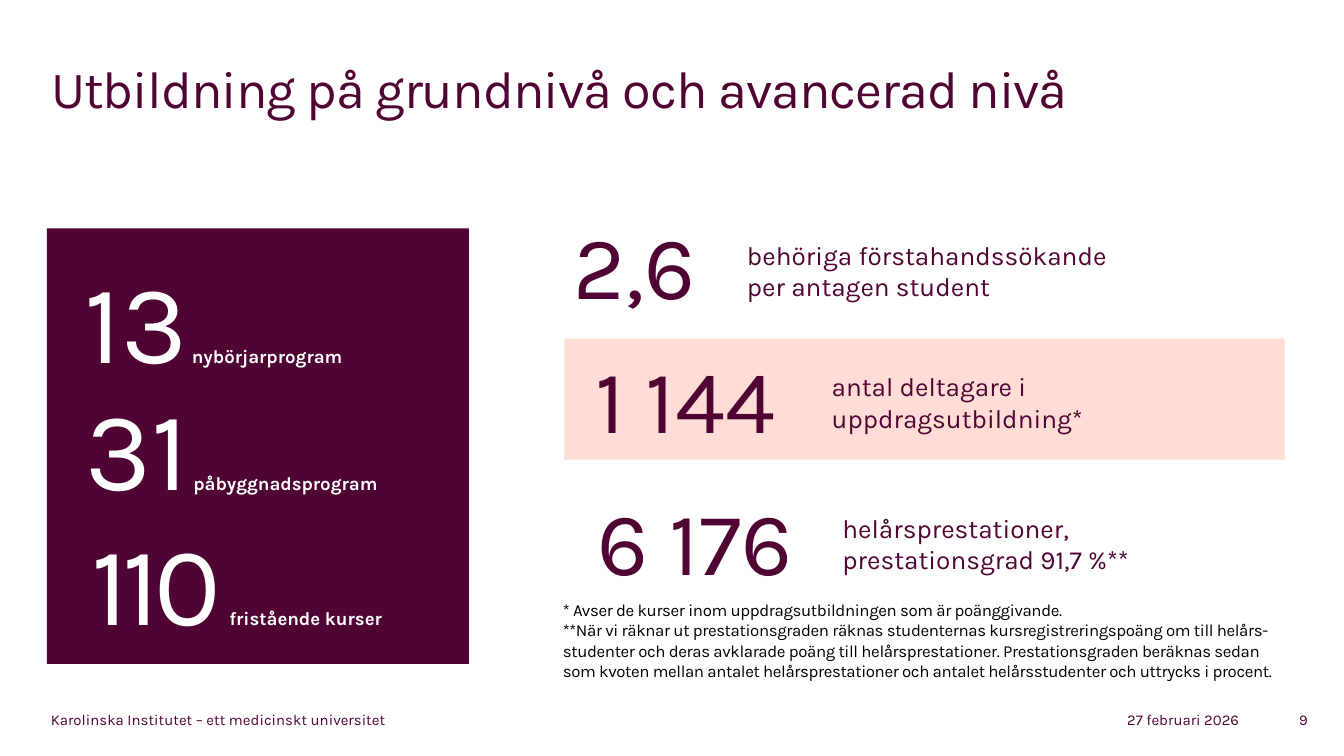
from dataclasses import dataclass

from pptx import Presentation
from pptx.dml.color import RGBColor
from pptx.enum.shapes import MSO_SHAPE
from pptx.enum.text import MSO_ANCHOR, MSO_AUTO_SIZE, PP_ALIGN
from pptx.util import Inches, Pt

RECT = MSO_SHAPE.RECTANGLE
TOP = MSO_ANCHOR.TOP
FIXED = MSO_AUTO_SIZE.NONE
LEFT, MID, RIGHT = PP_ALIGN.LEFT, PP_ALIGN.CENTER, PP_ALIGN.RIGHT
WIDTH = 10
HEIGHT = WIDTH * 9 / 16


@dataclass(frozen=True)
class Theme:
    font: str = "Karla"
    plum: RGBColor = RGBColor(0x4F, 0x04, 0x33)
    pink: RGBColor = RGBColor(0xFF, 0xDD, 0xD6)
    white: RGBColor = RGBColor(0xFF, 0xFF, 0xFF)
    black: RGBColor = RGBColor(0, 0, 0)
    title: int = 28
    count: int = 60
    figure: int = 48
    label: int = 14
    unit: int = 10
    note: int = 9
    foot: int = 8


THEME = Theme()


def write(para, text, size, color=THEME.plum, bold=False, track=0):
    for i, part in enumerate(text.split("\n")):
        if i:
            para.add_line_break()
        run = para.add_run()
        run.text = part
        font = run.font
        font.name, font.size, font.bold = THEME.font, Pt(size), bold
        font.color.rgb = color
        if track:
            run._r.get_or_add_rPr().set("spc", str(int(track * 100)))


def add_box(slide, x, y, w, h):
    box = slide.shapes.add_textbox(Inches(x), Inches(y), Inches(w), Inches(h))
    frame = box.text_frame
    frame.word_wrap = True
    frame.auto_size = FIXED
    frame.vertical_anchor = TOP
    return frame


def add_text(slide, x, y, w, h, lines, size, align=LEFT, pitch=None, **style):
    frame = add_box(slide, x, y, w, h)
    for i, line in enumerate(lines):
        para = frame.add_paragraph() if i else frame.paragraphs[0]
        para.alignment = align
        if pitch:
            para.line_spacing = Pt(pitch)
        write(para, line, size, **style)
    return frame


def add_title(slide, text):
    title = slide.shapes.title
    title.left, title.top = Inches(0.28), Inches(0.37)
    title.width, title.height = Inches(9.44), Inches(0.94)
    frame = title.text_frame
    frame.auto_size = FIXED
    frame.vertical_anchor = TOP
    para = frame.paragraphs[0]
    para.alignment = LEFT
    write(para, text, THEME.title, track=-0.5)


def add_panel(slide, x, y, w, h, color):
    panel = slide.shapes.add_shape(
        RECT, Inches(x), Inches(y), Inches(w), Inches(h))
    panel.shadow.inherit = False
    panel.fill.solid()
    panel.fill.fore_color.rgb = color
    panel.line.fill.background()


def add_count(slide, x, y, w, count, unit, gap=THEME.unit, track=0):
    para = add_box(slide, x, y, w, 1.11).paragraphs[0]
    write(para, count, THEME.count, THEME.white, track=track)
    write(para, " ", gap, THEME.white)
    write(para, unit, THEME.unit, THEME.white, bold=True)


def add_figure(slide, x, y, h, text, top=0.05, right=0.1):
    frame = add_text(slide, x, y, 2.36, h, [text], THEME.figure, align=MID)
    frame.margin_top, frame.margin_right = Inches(top), Inches(right)


def add_label(slide, x, y, w, *lines):
    add_text(slide, x, y, w, 0.57, lines, THEME.label)


def add_foot(slide, x, w, text, align=LEFT):
    add_text(slide, x, 5.24, w, 0.19, [text], THEME.foot, align=align)


def main():
    deck = Presentation()
    deck.slide_width, deck.slide_height = Inches(WIDTH), Inches(HEIGHT)
    slide = deck.slides.add_slide(deck.slide_layouts[5])

    add_title(slide, "Utbildning på grundnivå och avancerad nivå")
    add_panel(slide, 4.2, 2.52, 5.36, 0.9, THEME.pink)
    add_panel(slide, 0.35, 1.7, 3.14, 3.24, THEME.plum)

    add_count(slide, 0.53, 1.82, 3.77, "13", "nybörjarprogram")
    add_count(slide, 0.54, 2.77, 3.99, "31", "påbyggnadsprogram")
    add_count(slide, 0.58, 3.77, 3.41, "110", "fristående kurser",
              gap=20, track=-3)

    add_figure(slide, 3.66, 1.27, 1.55, "2,6", top=0.29, right=0.33)
    add_label(slide, 5.46, 1.73, 5,
              "behöriga förstahandssökande", "per antagen student")
    add_figure(slide, 4, 2.51, 1.25, "1 144", right=0.26)
    add_label(slide, 6.09, 2.71, 5, "antal deltagare i\nuppdragsutbildning*")
    add_figure(slide, 3.99, 3.57, 0.91, "6 176")
    add_label(slide, 6.17, 3.76, 5.23,
              "helårsprestationer,\nprestationsgrad 91,7 %**")

    notes = [
        "* Avser de kurser inom uppdragsutbildningen som är poänggivande.",
        "**När vi räknar ut prestationsgraden räknas studenternas "
        "kursregistreringspoäng om till helårs-studenter och deras avklarade "
        "poäng till helårsprestationer. Prestationsgraden beräknas sedan som "
        "kvoten mellan antalet helårsprestationer och antalet helårsstudenter "
        "och uttrycks i procent.",
    ]
    add_text(slide, 4.09, 4.41, 5.54, 0.6, notes, THEME.note,
             pitch=11, color=THEME.black, track=-0.2)

    add_foot(slide, 0.28, 3.07,
             "Karolinska Institutet – ett medicinskt universitet")
    add_foot(slide, 7.24, 2.08, "27 februari 2026", RIGHT)
    add_foot(slide, 9.08, 0.75, "9", RIGHT)

    deck.save("out.pptx")


if __name__ == "__main__":
    main()
